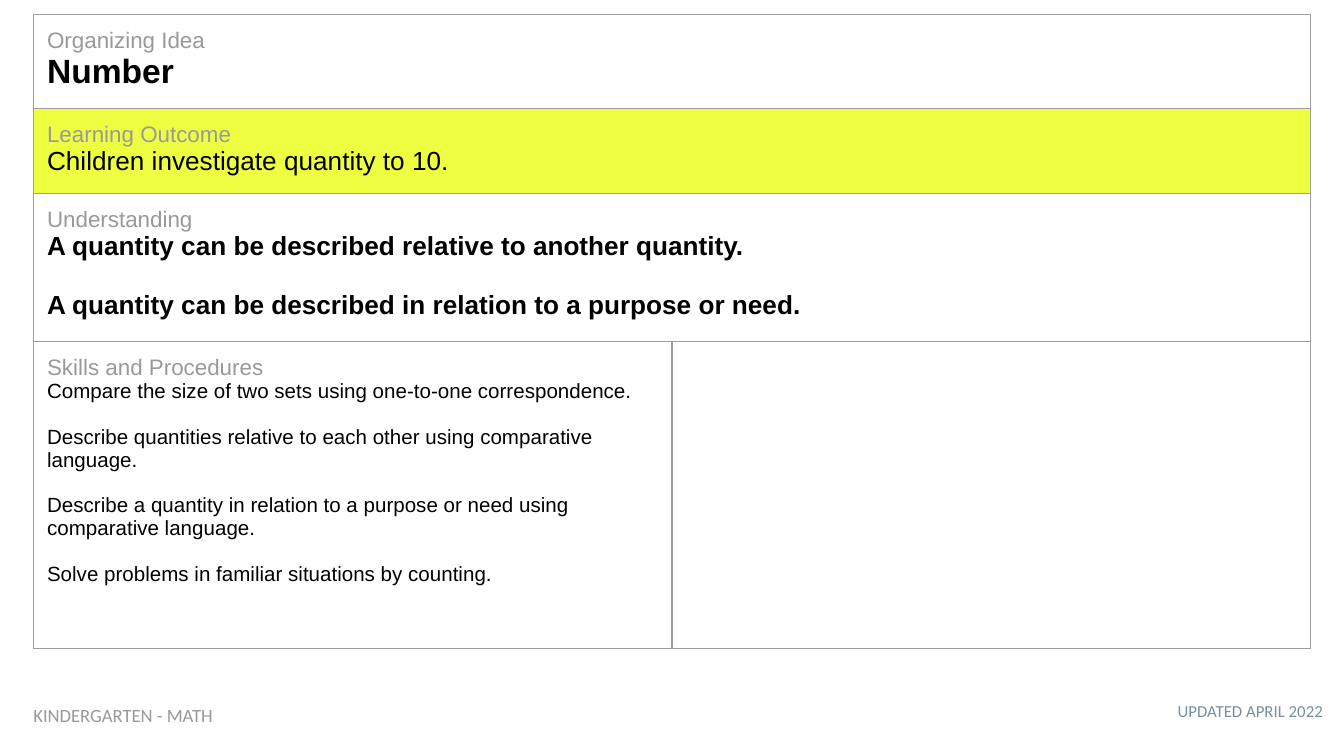
from dataclasses import dataclass
from itertools import product

from lxml.etree import SubElement
from pptx import Presentation
from pptx.dml.color import RGBColor
from pptx.enum.text import MSO_ANCHOR, PP_ALIGN
from pptx.oxml import parse_xml
from pptx.oxml.ns import nsdecls, qn
from pptx.slide import Slide
from pptx.table import Table, _Cell
from pptx.text.text import TextFrame, _Paragraph
from pptx.util import Pt

COLOURS = {
    "label": "999999",
    "body": "000000",
    "highlight": "EEFF41",
    "border": "9E9E9E",
    "updated": "78909C",
}
INSET = Pt(7.2)
MARGINS = {f"margin_{side}": INSET for side in ("left", "right", "top", "bottom")}
FRAME_FORMAT = {**MARGINS, "word_wrap": True}
CELL_FORMAT = {**MARGINS, "vertical_anchor": MSO_ANCHOR.TOP}
TABLE_FORMAT = {"first_row": False, "horz_banding": False}


@dataclass(frozen=True)
class Section:
    label: str
    statements: tuple[str, ...]
    height: float
    size: float
    bold: bool = False
    gap: float = 0
    fill: str = ""
    same_paragraph: bool = False
    merged: bool = True


@dataclass(frozen=True)
class Footer:
    text: str
    left: float
    top: float
    width: float
    height: float
    size: float
    colour: str
    alignment: PP_ALIGN


SECTIONS = (
    Section("Organizing Idea", ("Number",), 50.4, 18, bold=True, same_paragraph=True),
    Section("Learning Outcome", ("Children investigate quantity to 10.",), 45.6, 14,
            fill="highlight", same_paragraph=True),
    Section("Understanding", (
        "A quantity can be described relative to another quantity.",
        "A quantity can be described in relation to a purpose or need.",
    ), 79.2, 14, bold=True, gap=15.8),
    Section("Skills and Procedures", (
        "Compare the size of two sets using one-to-one correspondence.",
        "Describe quantities relative to each other using comparative language.",
        "Describe a quantity in relation to a purpose or need using comparative language.",
        "Solve problems in familiar situations by counting.",
    ), 164.4, 11, gap=12.3, merged=False),
)
FOOTERS = (
    Footer("UPDATED APRIL 2022", 521.3, 370.1, 194.4, 25.2, 9, "updated", PP_ALIGN.RIGHT),
    Footer("KINDERGARTEN - MATH", 10.8, 370.8, 216.7, 26.6, 10, "label", PP_ALIGN.LEFT),
)


def apply_format(target: object, values: dict) -> None:
    """Set every named attribute on the target."""
    for name, value in values.items():
        setattr(target, name, value)


def add_text(paragraph: _Paragraph, text: str, size: float, colour: str,
             font: str = "Arial", bold: bool = False) -> None:
    """Append one formatted run to a paragraph."""
    run = paragraph.add_run()
    run.text = text
    apply_format(run.font, {"name": font, "size": Pt(size), "bold": bold})
    run.font.color.rgb = RGBColor.from_string(COLOURS[colour])


def write_section(frame: TextFrame, section: Section) -> None:
    """Write a grey label followed by its statements."""
    paragraph = frame.paragraphs[0]
    add_text(paragraph, section.label, 12, "label")
    for index, statement in enumerate(section.statements):
        if section.same_paragraph:
            paragraph.add_line_break()
        else:
            paragraph = frame.add_paragraph()
            paragraph.space_before = Pt(section.gap if index else 0)
        add_text(paragraph, statement, section.size, "body", bold=section.bold)


def style_cell(cell: _Cell, fill: str) -> None:
    """Give a cell its margins, fill and four thin borders."""
    apply_format(cell, CELL_FORMAT)
    if fill:
        cell.fill.solid()
        cell.fill.fore_color.rgb = RGBColor.from_string(COLOURS[fill])
    else:
        cell.fill.background()
    properties = cell._tc.get_or_add_tcPr()
    for position, side in enumerate("LRTB"):
        border = parse_xml(f'<a:ln{side} {nsdecls("a")} w="{Pt(0.75)}"/>')
        solid = SubElement(border, qn("a:solidFill"))
        SubElement(solid, qn("a:srgbClr"), val=COLOURS["border"])
        properties.insert(position, border)


def add_outcome_table(slide: Slide) -> Table:
    """Add the table of curriculum sections."""
    total = sum(section.height for section in SECTIONS)
    table = slide.shapes.add_table(len(SECTIONS), 2, Pt(18), Pt(7.7), Pt(684), Pt(total)).table
    apply_format(table, TABLE_FORMAT)
    for column in table.columns:
        column.width = Pt(342)
    for (row, section), column in product(enumerate(SECTIONS), range(2)):
        style_cell(table.cell(row, column), section.fill)
    for row, section in enumerate(SECTIONS):
        table.rows[row].height = Pt(section.height)
        first = table.cell(row, 0)
        if section.merged:
            first.merge(table.cell(row, 1))
        write_section(first.text_frame, section)
    return table


def add_footer(slide: Slide, footer: Footer) -> None:
    """Add one line of footer text."""
    bounds = (footer.left, footer.top, footer.width, footer.height)
    frame = slide.shapes.add_textbox(*map(Pt, bounds)).text_frame
    apply_format(frame, FRAME_FORMAT)
    paragraph = frame.paragraphs[0]
    paragraph.alignment = footer.alignment
    add_text(paragraph, footer.text, footer.size, footer.colour, "Calibri")


def main() -> None:
    """Build and save the slide."""
    presentation = Presentation()
    apply_format(presentation, {"slide_width": Pt(720), "slide_height": Pt(405)})
    slide = presentation.slides.add_slide(presentation.slide_layouts[6])
    add_outcome_table(slide)
    for footer in FOOTERS:
        add_footer(slide, footer)
    presentation.save("out.pptx")


if __name__ == "__main__":
    main()
